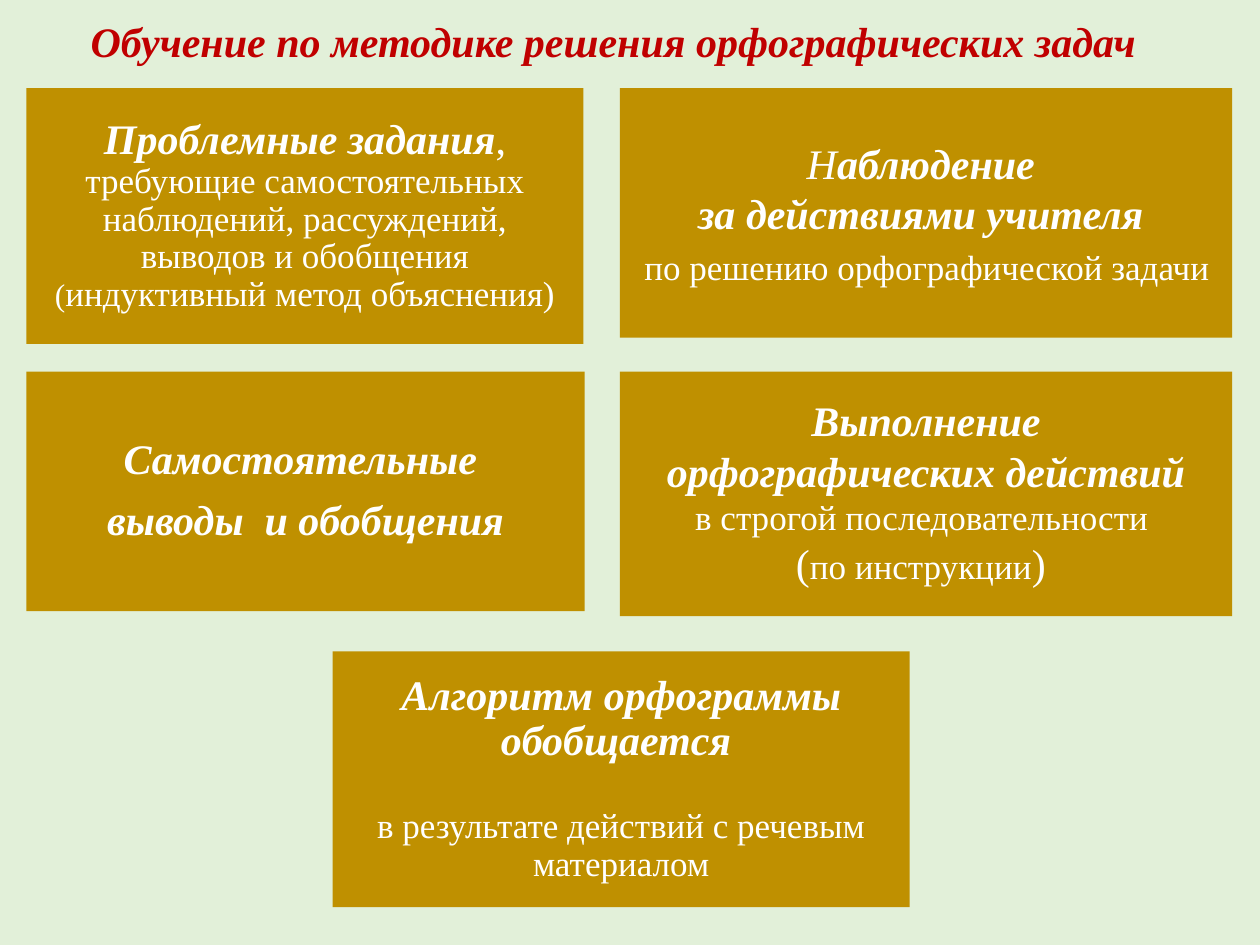
import pptx
import pptx.dml.color
import pptx.enum.shapes
import pptx.enum.text
import pptx.util

COLS, ROWS = 100, 75
FACE = "Times New Roman"
LEFT, RIGHT = 2.1, 49.2
TOP, MID, LOW = 7, 29.5, 51.7


def hue(code):
    """Turn a hex string into a colour."""
    return pptx.dml.color.RGBColor.from_string(code)


def place(deck, left, top, width, height):
    """Turn grid columns and rows into slide lengths."""
    col, row = deck.slide_width / COLS, deck.slide_height / ROWS
    return [round(n) for n in (left * col, top * row, width * col, height * row)]


def style(font, size, slant, bold):
    """Set the size and slope of a font."""
    font.size = pptx.util.Pt(size)
    font.italic = slant
    font.bold = bold


def head(text):
    """Make a bold italic run."""
    return text, 24, True, True


def body(text, size=20):
    """Make a plain run."""
    return text, size, False, False


def line(*runs, pitch=0.9, after=0, before=0):
    """Describe a paragraph of runs and its spacing."""
    return runs, pitch, after, before


def write(frame, lines, color, align):
    """Fill a text frame with paragraphs."""
    frame.word_wrap = True
    frame.vertical_anchor = pptx.enum.text.MSO_ANCHOR.MIDDLE
    for n, (runs, pitch, after, before) in enumerate(lines):
        para = frame.add_paragraph() if n else frame.paragraphs[0]
        para.alignment = align
        para.line_spacing = pitch
        para.space_after = pptx.util.Pt(after)
        para.space_before = pptx.util.Pt(before)
        para.font.name = FACE
        para.font.color.rgb = hue(color)
        if len(runs) == 1:
            style(para.font, *runs[0][1:])
        for text, *look in runs:
            run = para.add_run()
            run.text = text
            if len(runs) > 1:
                style(run.font, *look)


def title(deck, slide, text):
    """Add the red heading."""
    box = slide.shapes.add_textbox(*place(deck, 6.2, 0.8, 86.2, 5.4))
    write(box.text_frame, [line(head(text))], "C00000",
          pptx.enum.text.PP_ALIGN.LEFT)


def card(deck, slide, spot, lines):
    """Add a filled box with centred text."""
    box = slide.shapes.add_shape(
        pptx.enum.shapes.MSO_SHAPE.RECTANGLE, *place(deck, *spot))
    box.shadow.inherit = False
    box.fill.solid()
    box.fill.fore_color.rgb = hue("BF9000")
    box.line.fill.background()
    frame = box.text_frame
    frame.margin_top = frame.margin_bottom = pptx.util.Inches(0.1)
    write(frame, lines, "FFFFFF", pptx.enum.text.PP_ALIGN.CENTER)


def main():
    """Build the slide and save it."""
    deck = pptx.Presentation()
    deck.slide_width = pptx.util.Inches(10)
    deck.slide_height = pptx.util.Inches(7.5)
    slide = deck.slides.add_slide(deck.slide_layouts[6])
    slide.background.fill.solid()
    slide.background.fill.fore_color.rgb = hue("E2F0D9")
    title(deck, slide, "Обучение по методике решения орфографических задач")

    card(deck, slide, (LEFT, TOP, 44.2, 20.3), [
        line(head("Проблемные задания"), body(", ", 24),
             body("требующие самостоятельных наблюдений, рассуждений, "
                  "выводов и обобщения "),
             body("(", 18), body("индуктивный метод объяснения)"), after=8.4)])
    card(deck, slide, (RIGHT, TOP, 48.6, 19.8), [
        line(("Н", 24, True, False), head("аблюдение "), pitch=1),
        line(head("за действиями учителя "), pitch=1),
        line(body(" ", 24), body("по решению орфографической задачи "), pitch=1)])
    card(deck, slide, (LEFT, MID, 44.3, 19), [
        line(head("Самостоятельные "), after=8.4),
        line(head("выводы  и обобщения"), after=8.4)])
    card(deck, slide, (RIGHT, MID, 48.6, 19.4), [
        line(head("Выполнение")),
        line(head(" орфографических действий "), pitch=1),
        line(body("в строгой последовательности "), pitch=1),
        line(body("(", 24), body("по инструкции"), body(") ", 24), pitch=1)])
    card(deck, slide, (26.4, LOW, 45.8, 20.3), [
        line(head("Алгоритм орфограммы обобщается ")),
        line(body("в результате действий с речевым материалом"), before=25)])
    deck.save("out.pptx")


if __name__ == "__main__":
    main()
